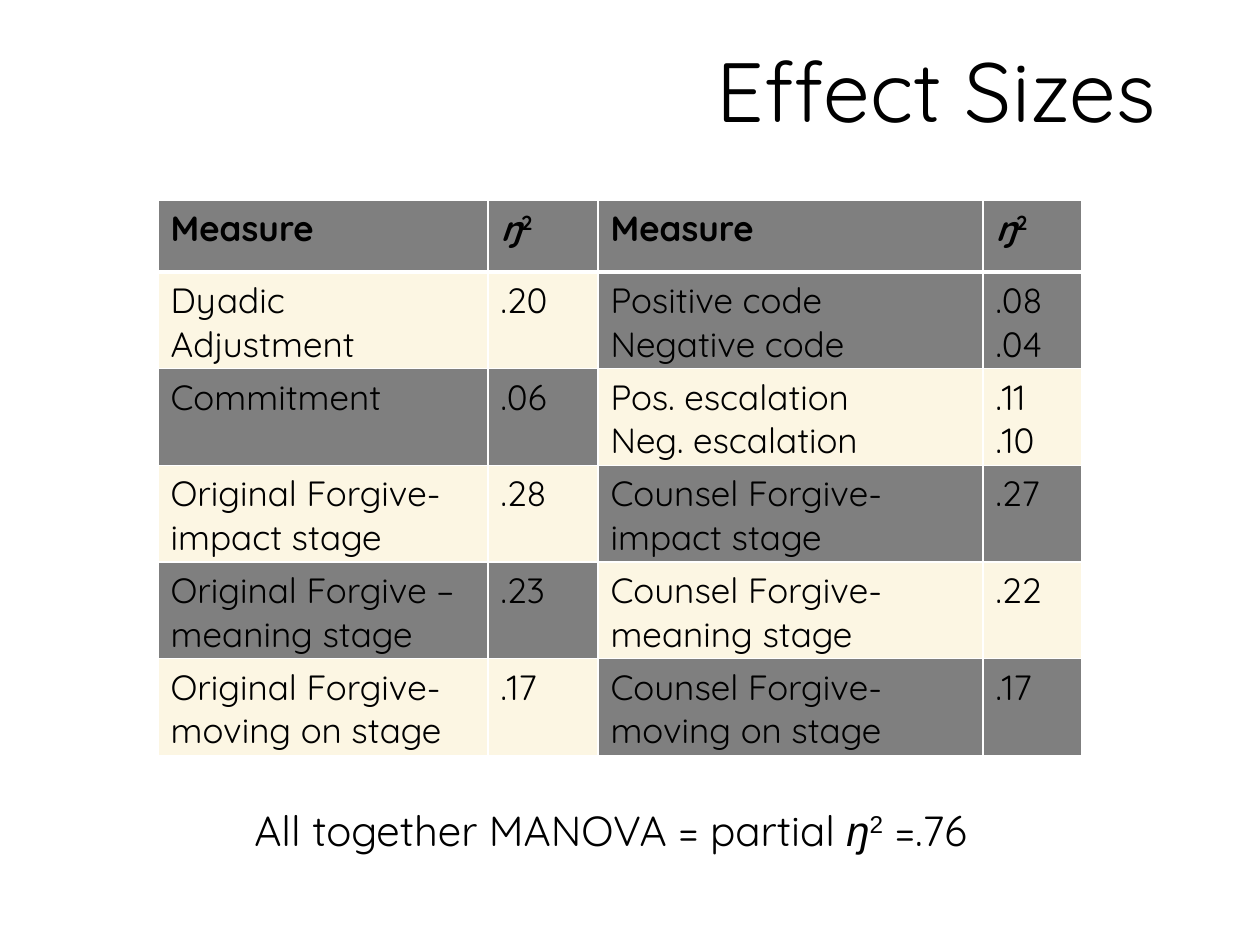
from lxml.etree import SubElement
from pptx import Presentation
from pptx.dml.color import RGBColor
from pptx.enum.text import MSO_AUTO_SIZE, PP_ALIGN
from pptx.oxml.ns import qn
from pptx.util import Emu, Pt

BLACK = RGBColor(0x00, 0x00, 0x00)
CREAM = RGBColor(0xFB, 0xEE, 0xC9)
WHITE = RGBColor(0xFF, 0xFF, 0xFF)
FONT = "Quicksand"
SYMBOL_FONT = "Arial"

TITLE = "Effect Sizes"
ETA_SQUARED = [("ŋ", {"italic": True}), ("2", {"baseline": 30})]
SUMMARY = [
    ("All together MANOVA = partial ", {}),
    ("ŋ", {"italic": True, "font": SYMBOL_FONT}),
    ("2", {"baseline": 30, "font": SYMBOL_FONT}),
    (" =.76", {}),
]
HEADER = ["Measure", ETA_SQUARED, "Measure", ETA_SQUARED]
MEASURES = [
    ["Dyadic Adjustment", ".20", "Positive code\nNegative code", ".08\n.04"],
    ["Commitment", ".06", "Pos. escalation\nNeg. escalation", ".11\n.10"],
    ["Original Forgive- impact stage", ".28", "Counsel Forgive- impact stage", ".27"],
    ["Original Forgive – meaning stage", ".23", "Counsel Forgive- meaning stage", ".22"],
    ["Original Forgive- moving on stage", ".17", "Counsel Forgive- moving on stage", ".17"],
]
COLUMN_WIDTHS = [330, 110, 385, 99]
HEADER_HEIGHT, ROW_HEIGHT = 72, 96


def px(value):
    return Emu(round(value * 914400 / 126))


def write_text(frame, text, size, bold=False, align=PP_ALIGN.LEFT):
    if isinstance(text, str):
        lines = [[(line, {})] for line in text.split("\n")]
    else:
        lines = [text]
    for index, pieces in enumerate(lines):
        paragraph = frame.add_paragraph() if index else frame.paragraphs[0]
        paragraph.alignment = align
        for content, style in pieces:
            run = paragraph.add_run()
            run.text = content
            run.font.name = style.get("font", FONT)
            run.font.size = Pt(size)
            run.font.bold = bold
            run.font.italic = style.get("italic", False)
            run.font.color.rgb = BLACK
            if "baseline" in style:
                run._r.get_or_add_rPr().set("baseline", str(style["baseline"] * 1000))


def add_text_box(slide, box, text, size, wrap=True, align=PP_ALIGN.LEFT):
    shape = slide.shapes.add_textbox(*map(px, box))
    shape.text_frame.word_wrap = wrap
    shape.text_frame.auto_size = MSO_AUTO_SIZE.SHAPE_TO_FIT_TEXT
    write_text(shape.text_frame, text, size, align=align)


def add_color(parent, color, alpha=None):
    fill = SubElement(parent, qn("a:solidFill"))
    value = SubElement(fill, qn("a:srgbClr"), val=str(color))
    if alpha is not None:
        SubElement(value, qn("a:alpha"), val=str(alpha * 1000))


def format_cell(cell, color, top, bottom):
    properties = cell._tc.get_or_add_tcPr()
    for side, width in (("L", 1), ("R", 1), ("T", top), ("B", bottom)):
        border = SubElement(properties, qn(f"a:ln{side}"), w=str(Pt(width)))
        add_color(border, WHITE)
    add_color(properties, color, alpha=50)


def add_measure_table(slide):
    rows = [HEADER] + MEASURES
    height = HEADER_HEIGHT + ROW_HEIGHT * len(MEASURES)
    box = (158, 200, sum(COLUMN_WIDTHS), height)
    table = slide.shapes.add_table(len(rows), len(HEADER), *map(px, box)).table
    table.first_row = table.horz_banding = False
    for column, width in zip(table.columns, COLUMN_WIDTHS):
        column.width = px(width)
    for row_index, row in enumerate(rows):
        is_header = row_index == 0
        table.rows[row_index].height = px(HEADER_HEIGHT if is_header else ROW_HEIGHT)
        for column_index, text in enumerate(row):
            cell = table.cell(row_index, column_index)
            is_cream = not is_header and (row_index + column_index // 2) % 2 == 1
            write_text(cell.text_frame, text, 20, bold=is_header)
            format_cell(
                cell,
                CREAM if is_cream else BLACK,
                top=3 if row_index == 1 else 1,
                bottom=3 if is_header else 1,
            )


def main():
    presentation = Presentation()
    presentation.slide_width = px(1260)
    presentation.slide_height = px(945)
    slide = presentation.slides.add_slide(presentation.slide_layouts[6])
    add_text_box(slide, (242, 798, 829, 63), SUMMARY, 24)
    add_measure_table(slide)
    add_text_box(slide, (703, 32, 465, 113), TITLE, 48, wrap=False, align=PP_ALIGN.RIGHT)
    presentation.save("out.pptx")


if __name__ == "__main__":
    main()
